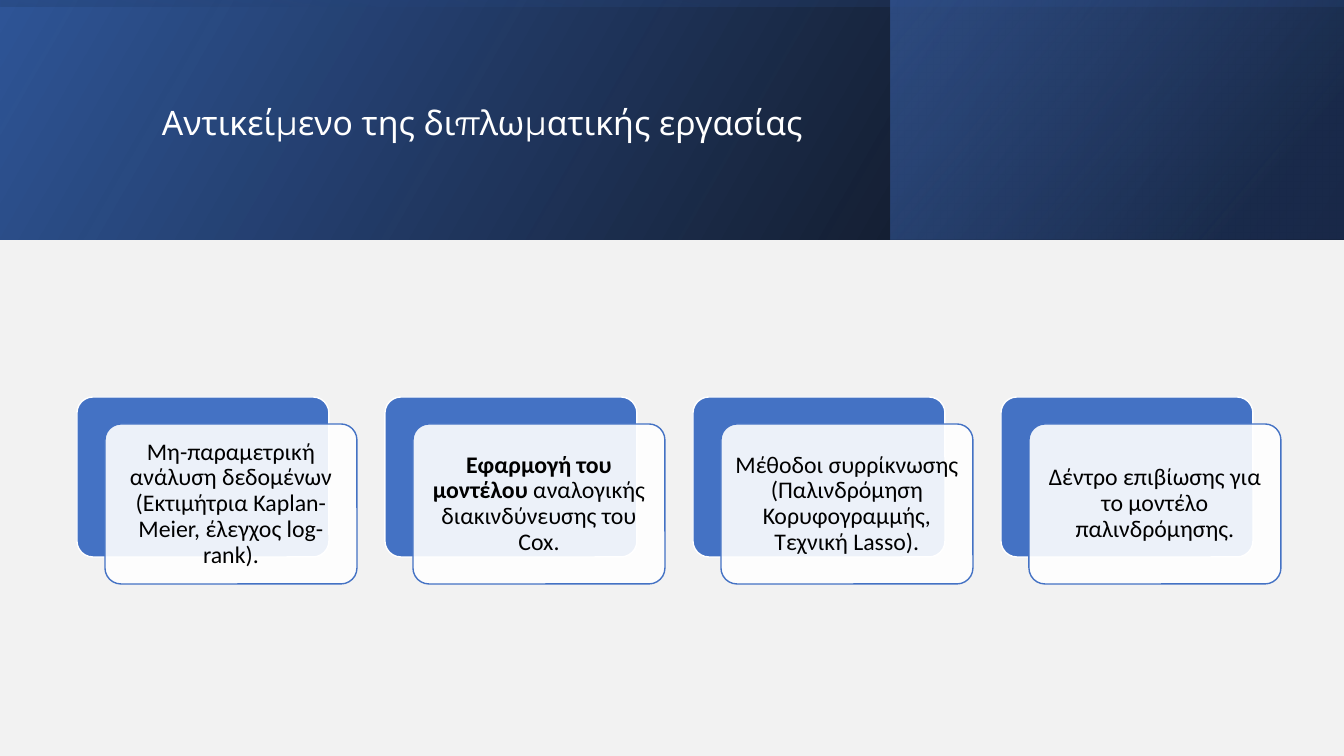
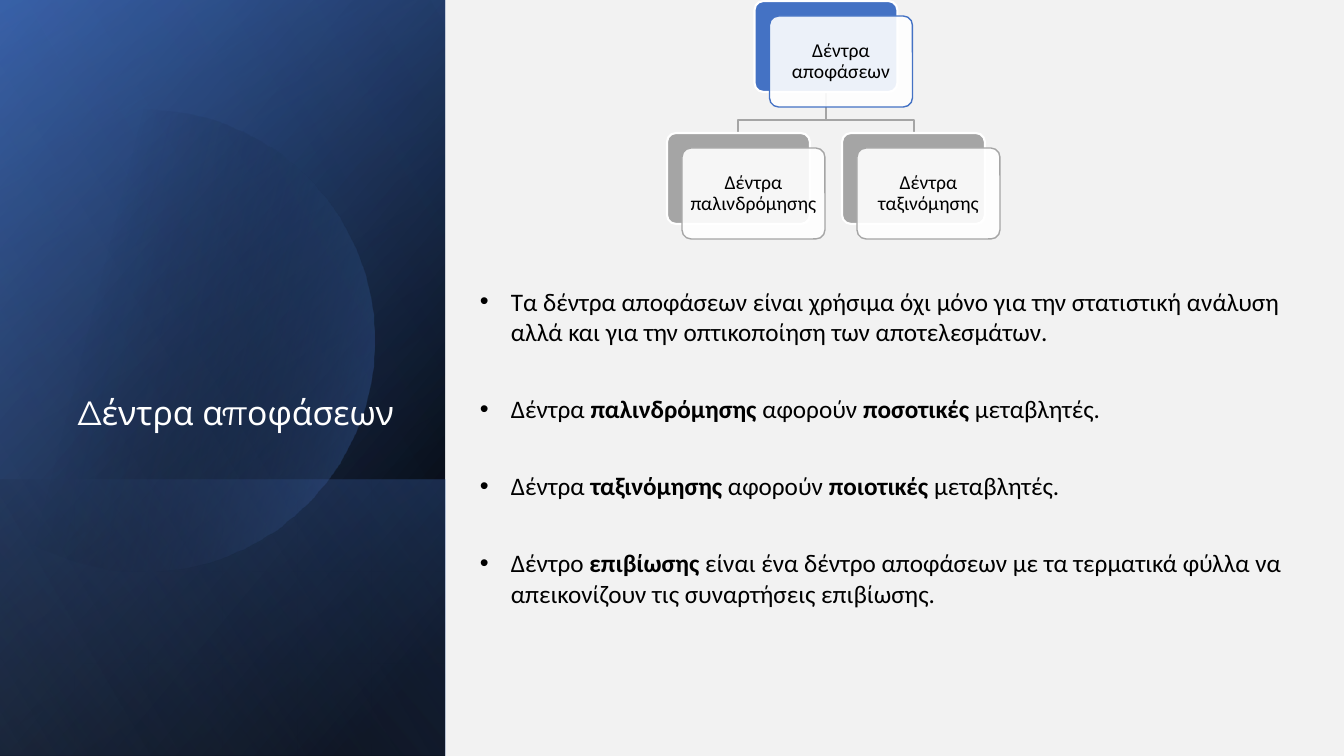
import math

import lxml.etree
import pptx
import pptx.dml.color
import pptx.enum.shapes
import pptx.enum.text
import pptx.oxml.ns
import pptx.util

WIDTH, HEIGHT = 1344, 756
EMU_PER_PX = 12192000 / WIDTH

PAPER, WHITE, BLACK = "F2F2F2", "FFFFFF", "000000"
BLUE, DEEP_BLUE, NAVY, PALE_BLUE = "4472C4", "2F5597", "203864", "8FAADC"
GRAY = "A5A5A5"
TITLE_FONT, BODY_FONT = "Montserrat", "Calibri"

ALIGN = pptx.enum.text.PP_ALIGN
ANCHOR = pptx.enum.text.MSO_ANCHOR
SHAPE = pptx.enum.shapes.MSO_SHAPE
qn = pptx.oxml.ns.qn


def px(length):
    return pptx.util.Emu(round(length * EMU_PER_PX))


def color(value):
    return pptx.dml.color.RGBColor.from_string(value)


def add_alpha(color_element, opacity):
    if opacity < 100:
        alpha = lxml.etree.SubElement(color_element, qn("a:alpha"))
        alpha.set("val", str(opacity * 1000))


def paint(shape, fill=None, opacity=100, line=None, line_width=1):
    """Set a plain fill and outline; None means nothing is drawn."""
    shape.shadow.inherit = False
    if fill:
        shape.fill.solid()
        shape.fill.fore_color.rgb = color(fill)
        add_alpha(shape.fill._xPr.find(".//" + qn("a:srgbClr")), opacity)
    else:
        shape.fill.background()
    if line:
        shape.line.color.rgb = color(line)
        shape.line.width = pptx.util.Pt(line_width)
    else:
        shape.line.fill.background()


def paint_gradient(shape, stops, angle):
    """Fill with (position, colour, opacity) stops along a clockwise angle."""
    paint(shape)
    properties = shape._element.spPr
    gradient = lxml.etree.Element(qn("a:gradFill"), rotWithShape="1")
    stop_list = lxml.etree.SubElement(gradient, qn("a:gsLst"))
    for position, value, opacity in stops:
        stop = lxml.etree.SubElement(stop_list, qn("a:gs"), pos=str(position * 1000))
        add_alpha(lxml.etree.SubElement(stop, qn("a:srgbClr"), val=value), opacity)
    lxml.etree.SubElement(gradient, qn("a:lin"), ang=str(angle * 60000), scaled="0")
    properties.replace(properties.find(qn("a:noFill")), gradient)


def gradient_band(page, box, stops, angle, turn=0):
    """Mirrored gradient rectangle that covers the box after being turned."""
    left, top, width, height = box
    if turn in (90, 270):
        left, top = left + (width - height) / 2, top + (height - width) / 2
        width, height = height, width
    band = page.shapes.add_shape(SHAPE.RECTANGLE, px(left), px(top), px(width), px(height))
    band.rotation = turn
    band._element.spPr.find(qn("a:xfrm")).set("flipH", "1")
    paint_gradient(band, stops, angle)


def outline(page, points, close):
    builder = page.shapes.build_freeform(*points[0], scale=EMU_PER_PX)
    builder.add_line_segments(points[1:], close=close)
    return builder.convert_to_shape()


def write(para, text, size=18, font=BODY_FONT, ink=BLACK, align=ALIGN.LEFT, spacing=None):
    """Write text into a paragraph; parts between asterisks are bold."""
    para.alignment = align
    if spacing:
        para.line_spacing = spacing
    for index, part in enumerate(text.split("*")):
        if part:
            span = para.add_run()
            span.text = part
            span.font.name = font
            span.font.size = pptx.util.Pt(size)
            span.font.bold = index % 2 == 1
            span.font.color.rgb = color(ink)


def text_box(page, box, anchor=ANCHOR.TOP):
    frame = page.shapes.add_textbox(*map(px, box)).text_frame
    frame.word_wrap = True
    frame.vertical_anchor = anchor
    return frame


def title(page, box, text, anchor, align):
    frame = text_box(page, box, anchor)
    write(frame.paragraphs[0], text, size=24, font=TITLE_FONT, ink=WHITE,
          align=align, spacing=0.9)


def layered_card(page, box, text, accent=BLUE, shift=(28, 27), size=17, margin=7, edge=1):
    """Coloured card with a translucent white card shifted in front of it."""
    left, top, width, height = box
    front_box = (left + shift[0], top + shift[1], width, height)
    cards = []
    for card_box in (box, front_box):
        card = page.shapes.add_shape(SHAPE.ROUNDED_RECTANGLE, *map(px, card_box))
        card.adjustments[0] = 0.1
        cards.append(card)
    back, front = cards
    paint(back, accent, line=WHITE, line_width=edge)
    paint(front, WHITE, opacity=90, line=accent)
    frame = front.text_frame
    frame.word_wrap = True
    frame.vertical_anchor = ANCHOR.MIDDLE
    frame.margin_left = frame.margin_right = px(margin)
    frame.margin_top = frame.margin_bottom = px(margin)
    write(frame.paragraphs[0], text, size=size, align=ALIGN.CENTER, spacing=0.9)


def header_band(page, box):
    left, top, width, height = box
    gradient_band(page, box, [(0, BLACK, 96), (100, DEEP_BLUE, 100)], 330)
    gradient_band(page, (left + 891, top, width - 891, height),
                  [(19, NAVY, 68), (100, BLUE, 48)], 320)
    gradient_band(page, box, [(23, DEEP_BLUE, 16), (99, BLACK, 45)], 350, turn=270)


def card_row(page, box, texts, pitch=308, card_width=252):
    left, top, _, height = box
    for index, text in enumerate(texts):
        layered_card(page, (left + index * pitch, top, card_width, height), text)


def side_panel(page, box):
    left, top, width, height = box
    gradient_band(page, box, [(8, BLACK, 100), (100, DEEP_BLUE, 100)], 50, turn=90)
    gradient_band(page, box, [(0, BLACK, 0), (99, BLUE, 46)], 30, turn=90)
    gradient_band(page, (left, top + 480, width, height - 480),
                  [(2, BLUE, 29), (100, BLACK, 30)], 130, turn=90)
    # Disc cut off by the left edge of the panel
    center_x, center_y, radius = 143, 341, 231
    reach = math.acos(-center_x / radius)
    steps = 120
    angles = [reach * (2 * step / steps - 1) for step in range(steps + 1)]
    disc = outline(page, [(left + center_x + radius * math.cos(angle),
                           top + center_y + radius * math.sin(angle))
                          for angle in angles], close=True)
    paint_gradient(disc, [(29, BLACK, 0), (100, BLUE, 43)], 14)
    gradient_band(page, box, [(0, BLACK, 0), (99, PALE_BLUE, 11)], 120, turn=90)


def tree_diagram(page, box, root, children):
    left, top, width, _ = box
    node_width, node_height, level = 143, 91, 132
    style = dict(shift=(15, 15), size=14, margin=5, edge=1.5)
    pitch = (width - node_width) / (len(children) - 1)
    root_left = left + (width - node_width) / 2
    child_lefts = [left + index * pitch for index in range(len(children))]
    # Branches
    root_x = root_left + node_width / 2
    for child_left in child_lefts:
        child_x = child_left + node_width / 2
        branch = outline(page, [(root_x, top + node_height), (root_x, top + 119),
                                (child_x, top + 119), (child_x, top + level)], close=False)
        paint(branch, line=GRAY)
    # Nodes
    layered_card(page, (root_left, top, node_width, node_height), root, **style)
    for child_left, text in zip(child_lefts, children):
        layered_card(page, (child_left, top + level, node_width, node_height), text,
                     accent=GRAY, **style)


def bullet_list(page, box, texts):
    frame = text_box(page, box)
    for index, text in enumerate(texts):
        para = frame.paragraphs[0] if index == 0 else frame.add_paragraph()
        write(para, text)
        para.space_after = pptx.util.Pt(33.5)
        properties = para._p.get_or_add_pPr()
        properties.set("marL", str(px(31)))
        properties.set("indent", str(px(-31)))
        lxml.etree.SubElement(properties, qn("a:buFont"), typeface="Arial")
        lxml.etree.SubElement(properties, qn("a:buChar"), char="•")


def new_page(deck):
    page = deck.slides.add_slide(deck.slide_layouts[6])
    page.background.fill.solid()
    page.background.fill.fore_color.rgb = color(PAPER)
    return page


def subject_slide(deck):
    page = new_page(deck)
    header_band(page, (0, 0, WIDTH, 240))
    title(page, (152, 38, 1072, 173), "Αντικείμενο της διπλωματικής εργασίας",
          ANCHOR.MIDDLE, ALIGN.LEFT)
    card_row(page, (77, 397, 1204, 160), [
        "Μη-παραμετρική ανάλυση δεδομένων (Εκτιμήτρια Kaplan-Meier, έλεγχος log-rank).",
        "*Εφαρμογή του μοντέλου* αναλογικής διακινδύνευσης του Cox.",
        "Μέθοδοι συρρίκνωσης (Παλινδρόμηση Κορυφογραμμής, Τεχνική Lasso).",
        "Δέντρο επιβίωσης για το μοντέλο παλινδρόμησης.",
    ])


def trees_slide(deck):
    page = new_page(deck)
    side_panel(page, (0, 0, 445, HEIGHT))
    title(page, (51, 65, 353, 373), "Δέντρα αποφάσεων", ANCHOR.BOTTOM, ALIGN.RIGHT)
    bullet_list(page, (470, 281, 836, 375), [
        "Τα δέντρα αποφάσεων είναι χρήσιμα όχι μόνο για την στατιστική ανάλυση "
        "αλλά και για την οπτικοποίηση των αποτελεσμάτων.",
        "Δέντρα *παλινδρόμησης* αφορούν *ποσοτικές* μεταβλητές.",
        "Δέντρα *ταξινόμησης* αφορούν *ποιοτικές* μεταβλητές.",
        "Δέντρο *επιβίωσης* είναι ένα δέντρο αποφάσεων με τα τερματικά φύλλα "
        "να απεικονίζουν τις συναρτήσεις επιβίωσης.",
    ])
    tree_diagram(page, (667, 1, 318, 223), "Δέντρα αποφάσεων",
                 ["Δέντρα παλινδρόμησης", "Δέντρα ταξινόμησης"])


def main():
    deck = pptx.Presentation()
    deck.slide_width, deck.slide_height = px(WIDTH), px(HEIGHT)
    subject_slide(deck)
    trees_slide(deck)
    deck.save("out.pptx")


if __name__ == "__main__":
    main()
